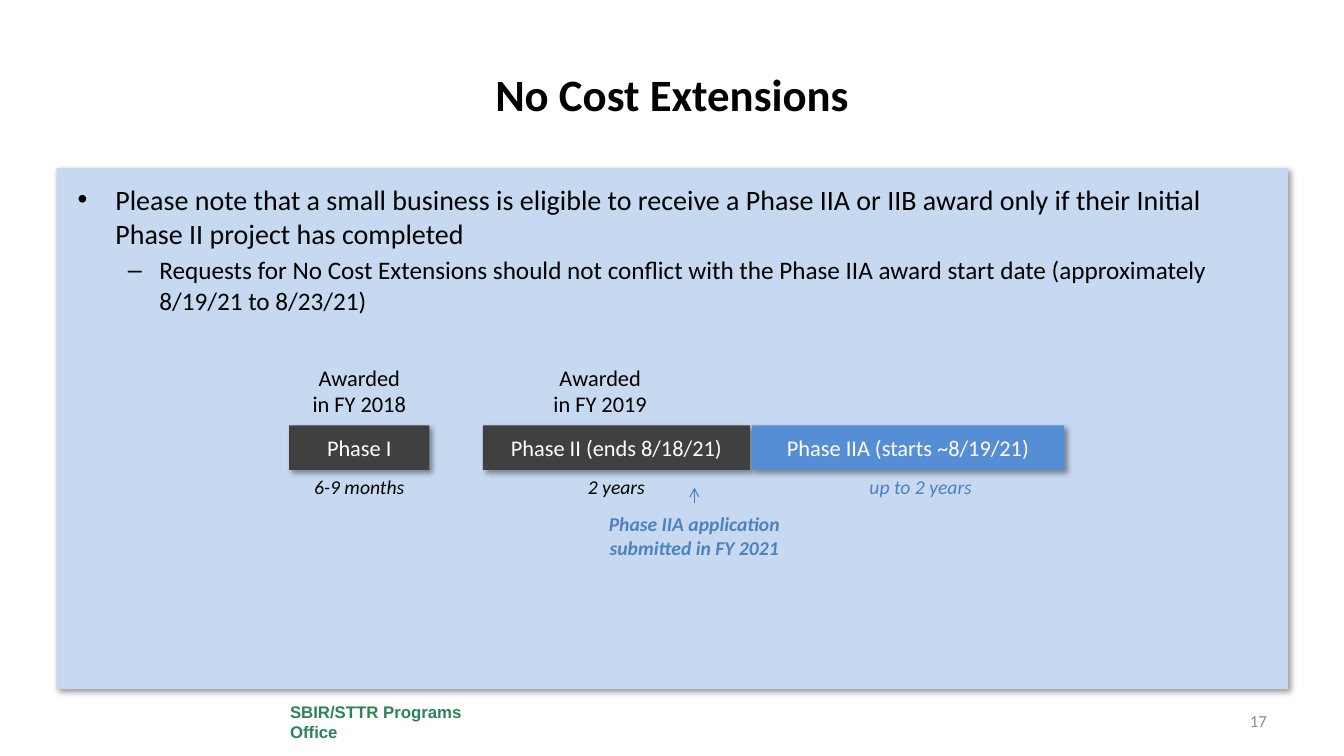
import pptx
import pptx.util
import pptx.oxml
import pptx.oxml.ns
import pptx.dml.color
import pptx.enum.text
import pptx.enum.shapes

Cm = pptx.util.Cm
Pt = pptx.util.Pt
RGBColor = pptx.dml.color.RGBColor
qn = pptx.oxml.ns.qn
ALIGN = pptx.enum.text.PP_ALIGN
ANCHOR = pptx.enum.text.MSO_ANCHOR
AUTO_SIZE = pptx.enum.text.MSO_AUTO_SIZE

BLACK = RGBColor(0x00, 0x00, 0x00)
WHITE = RGBColor(0xFF, 0xFF, 0xFF)
PANEL_BLUE = RGBColor(0xC6, 0xD9, 0xF1)
CHARCOAL = RGBColor(0x40, 0x40, 0x40)
BAR_BLUE = RGBColor(0x55, 0x8E, 0xD5)
NOTE_BLUE = RGBColor(0x4F, 0x81, 0xBD)
ARROW_BLUE = RGBColor(0x4B, 0x7E, 0xBC)
FOOTER_GREEN = RGBColor(0x2C, 0x84, 0x58)
PAGE_GRAY = RGBColor(0x8C, 0x8C, 0x8C)

TITLE = {"name": "Calibri", "size": Pt(32), "bold": True}
BODY_LEVELS = [{"name": "Calibri", "size": Pt(20)}, {"name": "Calibri", "size": Pt(18)}]
LABEL = {"name": "Calibri", "size": Pt(16)}
DURATION = {"name": "Calibri", "size": Pt(14), "italic": True}
NOTE = {**DURATION, "bold": True}
FOOTER = {"name": "Arial", "size": Pt(12), "bold": True}
PAGE = {"name": "Calibri", "size": Pt(12)}

BULLETS = [
    "Please note that a small business is eligible to receive a Phase IIA or IIB award "
    "only if their Initial Phase II project has completed",
    "Requests for No Cost Extensions should not conflict with the Phase IIA award start "
    "date (approximately 8/19/21 to 8/23/21)",
]

PHASES = [
    {"left": 0, "width": 3.53, "fill": CHARCOAL, "name": "Phase I",
     "award": "Awarded in FY 2018", "award_shift": 0,
     "duration": "6-9 months", "duration_shift": 0, "duration_color": BLACK},
    {"left": 4.88, "width": 6.73, "fill": CHARCOAL, "name": "Phase II (ends 8/18/21)",
     "award": "Awarded in FY 2019", "award_shift": -0.41,
     "duration": "2 years", "duration_shift": 0, "duration_color": BLACK},
    {"left": 11.66, "width": 7.87, "fill": BAR_BLUE, "name": "Phase IIA (starts ~8/19/21)",
     "award": None, "award_shift": 0,
     "duration": "up to 2 years", "duration_shift": 0.32, "duration_color": NOTE_BLUE},
]


def format_paragraph(paragraph, text, style, color, align):
    paragraph.text = text
    paragraph.alignment = align
    for attribute, value in style.items():
        setattr(paragraph.font, attribute, value)
    paragraph.font.color.rgb = color


def place(shape, box):
    for attribute, value in zip(("left", "top", "width", "height"), box):
        setattr(shape, attribute, Cm(value))


def add_label(slide, box, text, style, color, align=ALIGN.CENTER, anchor=ANCHOR.TOP):
    label = slide.shapes.add_textbox(*map(Cm, box))
    label.text_frame.word_wrap = True
    label.text_frame.vertical_anchor = anchor
    format_paragraph(label.text_frame.paragraphs[0], text, style, color, align)


def add_shadowed_rectangle(slide, box, fill):
    rectangle = slide.shapes.add_shape(
        pptx.enum.shapes.MSO_SHAPE.RECTANGLE, *map(Cm, box))
    rectangle.fill.solid()
    rectangle.fill.fore_color.rgb = fill
    rectangle.line.fill.background()
    rectangle.shadow.inherit = False
    effects = rectangle._element.spPr.find(qn("a:effectLst"))
    effects.append(pptx.oxml.parse_xml(
        f'<a:outerShdw {pptx.oxml.ns.nsdecls("a")} blurRad="{Pt(4)}" dist="{Pt(3)}" '
        'dir="2700000" algn="tl" rotWithShape="0"><a:srgbClr val="000000">'
        '<a:alpha val="40000"/></a:srgbClr></a:outerShdw>'))
    return rectangle


def add_panel(slide, box):
    panel = add_shadowed_rectangle(slide, box, PANEL_BLUE)
    slide.shapes._spTree.insert(2, panel._element)


def fill_title(slide, box):
    title = slide.shapes.title
    place(title, box)
    frame = title.text_frame
    frame.auto_size = AUTO_SIZE.NONE
    frame.vertical_anchor = ANCHOR.MIDDLE
    format_paragraph(frame.paragraphs[0], "No Cost Extensions", TITLE, BLACK, ALIGN.CENTER)


def fill_body(slide, box):
    body = slide.placeholders[1]
    place(body, box)
    frame = body.text_frame
    frame.auto_size = AUTO_SIZE.NONE
    for level, (text, style) in enumerate(zip(BULLETS, BODY_LEVELS)):
        paragraph = frame.add_paragraph() if level else frame.paragraphs[0]
        paragraph.level = level
        format_paragraph(paragraph, text, style, BLACK, ALIGN.LEFT)
    frame.paragraphs[0].space_before = Pt(0)


def add_phase(slide, left, top, phase):
    bar = add_shadowed_rectangle(
        slide, (left + phase["left"], top + 1.68, phase["width"], 1.12), phase["fill"])
    bar.text_frame.vertical_anchor = ANCHOR.MIDDLE
    format_paragraph(bar.text_frame.paragraphs[0], phase["name"], LABEL, WHITE, ALIGN.CENTER)
    center = left + phase["left"] + phase["width"] / 2
    duration_left = center + phase["duration_shift"] - 3.33 / 2
    add_label(slide, (duration_left, top + 2.8, 3.33, 0.86),
              phase["duration"], DURATION, phase["duration_color"])
    if phase["award"]:
        award_left = center + phase["award_shift"] - 2.97 / 2
        add_label(slide, (award_left, top, 2.97, 1.63), phase["award"], LABEL, BLACK)


def add_application_note(slide, center, top):
    arrow = slide.shapes.add_connector(
        pptx.enum.shapes.MSO_CONNECTOR.STRAIGHT,
        Cm(center), Cm(top + 0.38), Cm(center), Cm(top))
    arrow.line.color.rgb = ARROW_BLUE
    arrow.line.width = Pt(0.75)
    line = arrow.line._get_or_add_ln()
    line.append(pptx.oxml.parse_xml(
        f'<a:tailEnd {pptx.oxml.ns.nsdecls("a")} type="arrow"/>'))
    arrow._element.spPr.append(pptx.oxml.parse_xml(
        f'<a:effectLst {pptx.oxml.ns.nsdecls("a")}/>'))
    add_label(slide, (center - 2.82, top + 0.49, 5.64, 1.45),
              "Phase IIA application submitted in FY 2021", NOTE, NOTE_BLUE)


def add_timeline(slide, left, top):
    for phase in PHASES:
        add_phase(slide, left, top, phase)
    add_application_note(slide, left + 10.21, top + 3.25)


def add_footer(slide, left, top):
    add_label(slide, (left, top, 5.36, 1.22), "SBIR/STTR Programs Office",
              FOOTER, FOOTER_GREEN, ALIGN.LEFT, ANCHOR.MIDDLE)
    add_label(slide, (left + 19.76, top + 0.07, 5.36, 1.02), "17",
              PAGE, PAGE_GRAY, ALIGN.RIGHT, ANCHOR.MIDDLE)


def main():
    presentation = pptx.Presentation()
    presentation.slide_width = Cm(33.87)
    presentation.slide_height = Cm(19.05)
    slide = presentation.slides.add_slide(presentation.slide_layouts[1])
    add_panel(slide, (1.42, 4.24, 31.04, 13.13))
    fill_title(slide, (1.7, 0.76, 30.48, 3.18))
    fill_body(slide, (1.7, 4.47, 30.48, 11.51))
    add_timeline(slide, 7.29, 9.04)
    add_footer(slide, 7.06, 17.58)
    presentation.save("out.pptx")


if __name__ == "__main__":
    main()
